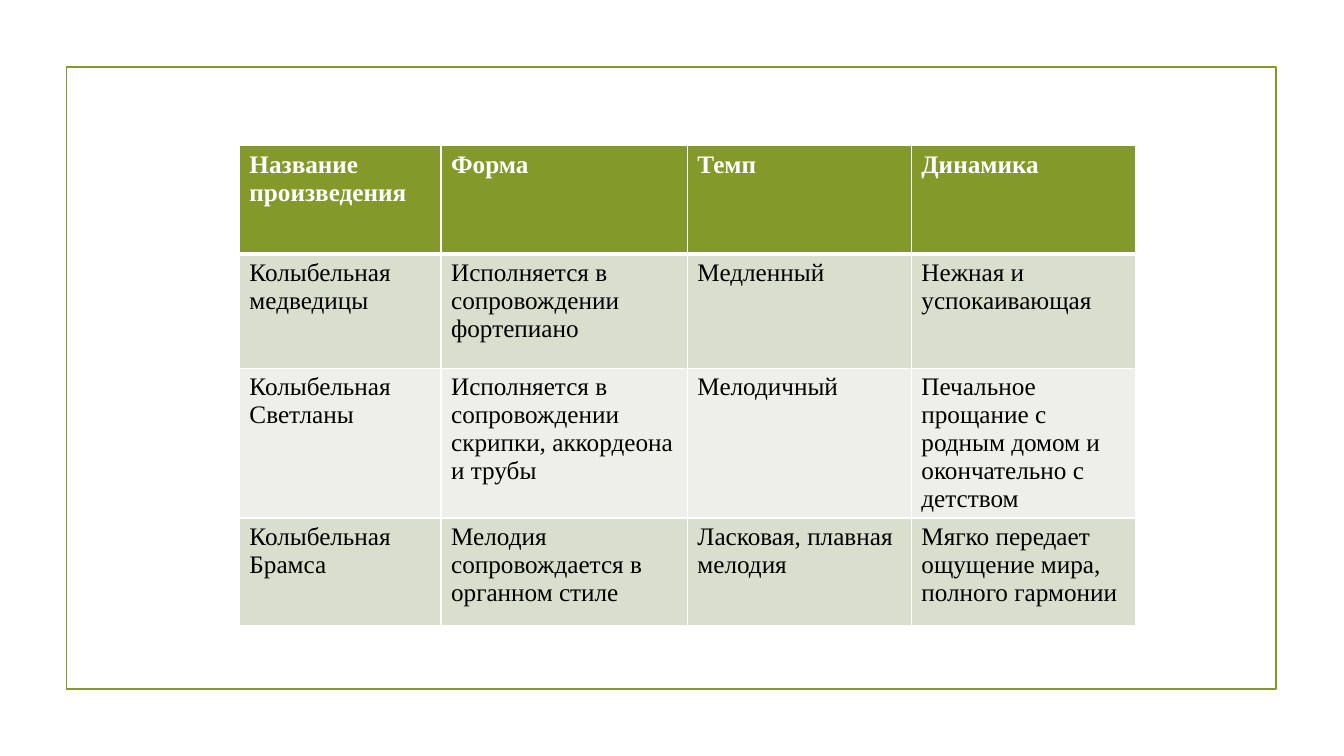
from dataclasses import dataclass

from lxml import etree
from pptx import Presentation
from pptx.dml.color import RGBColor
from pptx.enum import shapes
from pptx.oxml import ns
from pptx.util import Pt


@dataclass(frozen=True)
class Theme:
    olive: str = "83992A"
    band_dark: str = "D9DECD"
    band_light: str = "EDEFE8"
    white: str = "FFFFFF"
    black: str = "000000"
    font: str = "Times New Roman"
    text_size: float = 18
    frame_line: float = 1.25
    cell_line: float = 1
    header_line: float = 3


THEME = Theme()
COLUMN_WIDTHS = [144, 176, 160, 160]
ROW_HEIGHTS = [77.5, 81.5, 107, 77]
LULLABIES = [
    ["Название произведения", "Форма", "Темп", "Динамика"],
    ["Колыбельная медведицы", "Исполняется в сопровождении фортепиано",
     "Медленный", "Нежная и успокаивающая"],
    ["Колыбельная Светланы",
     "Исполняется в сопровождении скрипки, аккордеона и трубы",
     "Мелодичный",
     "Печальное прощание с родным домом и окончательно с детством"],
    ["Колыбельная Брамса", "Мелодия сопровождается в органном стиле",
     "Ласковая, плавная мелодия",
     "Мягко передает ощущение мира, полного гармонии"],
]


def add_frame(page, left, top, width, height):
    frame = page.shapes.add_shape(
        shapes.MSO_SHAPE.RECTANGLE, Pt(left), Pt(top), Pt(width), Pt(height))
    frame.shadow.inherit = False
    frame.fill.background()
    frame.line.color.rgb = RGBColor.from_string(THEME.olive)
    frame.line.width = Pt(THEME.frame_line)


def set_borders(cell, widths):
    """Draw white cell borders; widths maps the sides L, R, T, B to points."""
    properties = cell._tc.get_or_add_tcPr()
    for index, (side, width) in enumerate(widths.items()):
        line = etree.Element(ns.qn(f"a:ln{side}"), w=str(Pt(width)))
        fill = etree.SubElement(line, ns.qn("a:solidFill"))
        etree.SubElement(fill, ns.qn("a:srgbClr"), val=THEME.white)
        properties.insert(index, line)


def format_cell(cell, words, row):
    is_header = row == 0
    band = THEME.band_dark if row % 2 else THEME.band_light
    cell.fill.solid()
    cell.fill.fore_color.rgb = RGBColor.from_string(
        THEME.olive if is_header else band)
    set_borders(cell, {
        "L": THEME.cell_line,
        "R": THEME.cell_line,
        "T": THEME.header_line if row == 1 else THEME.cell_line,
        "B": THEME.header_line if is_header else THEME.cell_line,
    })
    span = cell.text_frame.paragraphs[0].add_run()
    span.text = words
    font_format = {"name": THEME.font, "size": Pt(THEME.text_size),
                   "bold": is_header}
    for name, value in font_format.items():
        setattr(span.font, name, value)
    span.font.color.rgb = RGBColor.from_string(
        THEME.white if is_header else THEME.black)


def add_lullaby_table(page, left, top):
    table = page.shapes.add_table(
        len(ROW_HEIGHTS), len(COLUMN_WIDTHS), Pt(left), Pt(top),
        Pt(sum(COLUMN_WIDTHS)), Pt(sum(ROW_HEIGHTS))).table
    for column, width in zip(table.columns, COLUMN_WIDTHS):
        column.width = Pt(width)
    for row, height in zip(table.rows, ROW_HEIGHTS):
        row.height = Pt(height)
    for row, texts in enumerate(LULLABIES):
        for column, words in enumerate(texts):
            format_cell(table.cell(row, column), words, row)


def main():
    deck = Presentation()
    deck.slide_width, deck.slide_height = Pt(960), Pt(540)
    page = deck.slides.add_slide(deck.slide_layouts[6])
    add_frame(page, 47.5, 48, 864, 444)
    add_lullaby_table(page, 171, 104)
    deck.save("out.pptx")


if __name__ == "__main__":
    main()
